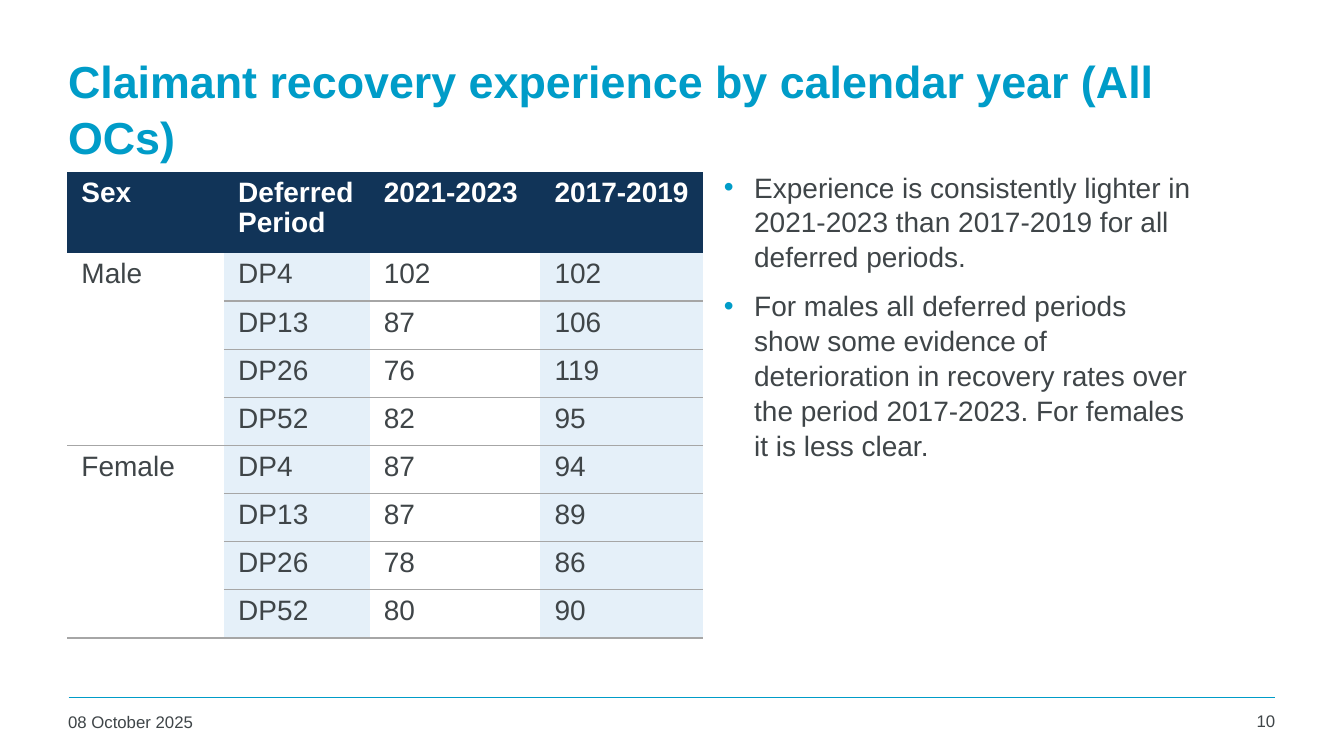
import lxml.etree
import pptx
import pptx.dml.color
import pptx.enum.shapes
import pptx.enum.text
import pptx.oxml.ns
import pptx.util

Pt = pptx.util.Pt
qn = pptx.oxml.ns.qn
ALIGN = pptx.enum.text.PP_ALIGN
ANCHOR = pptx.enum.text.MSO_ANCHOR

FONT = "Arial"
COLOURS = {
    "accent": "009CC8",
    "header": "113458",
    "text": "3F4548",
    "white": "FFFFFF",
    "tint": "E5F0F9",
    "rule": "A6A6A6",
}
NO_STYLE_NO_GRID = "{2D5ABB26-0587-4C30-8999-92F81FD0307C}"

HEADINGS = ["Sex", "Deferred Period", "2021-2023", "2017-2019"]
PERIODS = ["DP4", "DP13", "DP26", "DP52"]
RESULTS = {
    "Male": [(102, 102), (87, 106), (76, 119), (82, 95)],
    "Female": [(87, 94), (87, 89), (78, 86), (80, 90)],
}
COLUMN_WIDTHS = [112, 104, 122, 116.4]
HEADER_HEIGHT = 58
ROW_HEIGHT = 34.4

FINDINGS = [
    "Experience is consistently lighter in 2021-2023 than 2017-2019 "
    "for all deferred periods.",
    "For males all deferred periods show some evidence of deterioration in "
    "recovery rates over the period 2017-2023. For females it is less clear.",
]


def colour(name):
    return pptx.dml.color.RGBColor.from_string(COLOURS[name])


def add_bullet(para, indent):
    properties = para._p.get_or_add_pPr()
    properties.set("marL", str(Pt(indent)))
    properties.set("indent", str(-Pt(indent)))
    bullet_colour = lxml.etree.SubElement(properties, qn("a:buClr"))
    lxml.etree.SubElement(bullet_colour, qn("a:srgbClr"), val=COLOURS["accent"])
    lxml.etree.SubElement(properties, qn("a:buFont"), typeface=FONT)
    lxml.etree.SubElement(properties, qn("a:buChar"), char="•")


def write_text(frame, *texts, size=20, fill="text", bold=False,
               align=ALIGN.LEFT, spacing=1.0, gap=0, bullet_indent=0):
    """Write one paragraph per text, with the gap between paragraphs."""
    frame.word_wrap = True
    for index, text in enumerate(texts):
        para = frame.paragraphs[0] if index == 0 else frame.add_paragraph()
        para.alignment = align
        para.line_spacing = spacing
        if index:
            para.space_before = Pt(gap)
        if bullet_indent:
            add_bullet(para, bullet_indent)
        span = para.add_run()
        span.text = text
        span.font.name = FONT
        span.font.size = Pt(size)
        span.font.bold = bold
        span.font.color.rgb = colour(fill)


def add_text_box(page, left, top, width, height, *texts,
                 anchor=ANCHOR.TOP, **text_format):
    box = page.shapes.add_textbox(Pt(left), Pt(top), Pt(width), Pt(height))
    box.text_frame.vertical_anchor = anchor
    write_text(box.text_frame, *texts, **text_format)


def add_rule(page, left, right, top):
    rule = page.shapes.add_connector(
        pptx.enum.shapes.MSO_CONNECTOR.STRAIGHT,
        Pt(left), Pt(top), Pt(right), Pt(top))
    rule.line.color.rgb = colour("accent")
    rule.line.width = Pt(1)
    lxml.etree.SubElement(rule._element.spPr, qn("a:effectLst"))


def add_bottom_border(cell):
    properties = cell._tc.get_or_add_tcPr()
    border = lxml.etree.Element(qn("a:lnB"), w=str(Pt(1)))
    solid = lxml.etree.SubElement(border, qn("a:solidFill"))
    lxml.etree.SubElement(solid, qn("a:srgbClr"), val=COLOURS["rule"])
    properties.insert(0, border)


def fill_cell(cell, text, background, **text_format):
    cell.margin_left = cell.margin_right = Pt(10.2)
    cell.margin_top = cell.margin_bottom = Pt(5.1)
    cell.fill.solid()
    cell.fill.fore_color.rgb = colour(background)
    write_text(cell.text_frame, text, spacing=0.96, **text_format)


def add_results_table(page, left, top):
    row_count = 1 + len(RESULTS) * len(PERIODS)
    height = HEADER_HEIGHT + ROW_HEIGHT * (row_count - 1)
    table = page.shapes.add_table(
        row_count, len(HEADINGS), Pt(left), Pt(top),
        Pt(sum(COLUMN_WIDTHS)), Pt(height)).table
    table.first_row = table.horz_banding = False
    table._tbl.tblPr.find(qn("a:tableStyleId")).text = NO_STYLE_NO_GRID
    for column, width in zip(table.columns, COLUMN_WIDTHS):
        column.width = Pt(width)
    for row in table.rows:
        row.height = Pt(ROW_HEIGHT)
    table.rows[0].height = Pt(HEADER_HEIGHT)

    for column, heading in enumerate(HEADINGS):
        fill_cell(table.cell(0, column), heading, "header",
                  fill="white", bold=True)
    for group, (sex, results) in enumerate(RESULTS.items()):
        first = 1 + group * len(PERIODS)
        last = first + len(PERIODS) - 1
        sex_cell = table.cell(first, 0)
        sex_cell.merge(table.cell(last, 0))
        fill_cell(sex_cell, sex, "white")
        add_bottom_border(sex_cell)
        add_bottom_border(table.cell(last, 0))
        for offset, (period, result) in enumerate(zip(PERIODS, results)):
            for column, value in enumerate((period, *result), start=1):
                cell = table.cell(first + offset, column)
                fill_cell(cell, str(value), "tint" if column % 2 else "white")
                add_bottom_border(cell)


def main():
    deck = pptx.Presentation()
    deck.slide_width, deck.slide_height = Pt(960), Pt(540)
    page = deck.slides.add_slide(deck.slide_layouts[6])

    add_rule(page, 49, 911, 498.3)
    add_text_box(page, 41.5, 32, 870.5, 90,
                 "Claimant recovery experience by calendar year (All OCs)",
                 size=32, fill="accent", bold=True, spacing=1.04,
                 anchor=ANCHOR.MIDDLE)
    add_results_table(page, 48, 122.6)
    add_text_box(page, 41.5, 505, 212, 26, "08 October 2025", size=12)
    add_text_box(page, 850.5, 504, 67.5, 26.5, "10", size=12,
                 align=ALIGN.RIGHT)
    add_text_box(page, 510, 117, 350, 365, *FINDINGS,
                 spacing=1.04, gap=10, bullet_indent=21.6)

    deck.save("out.pptx")


if __name__ == "__main__":
    main()
